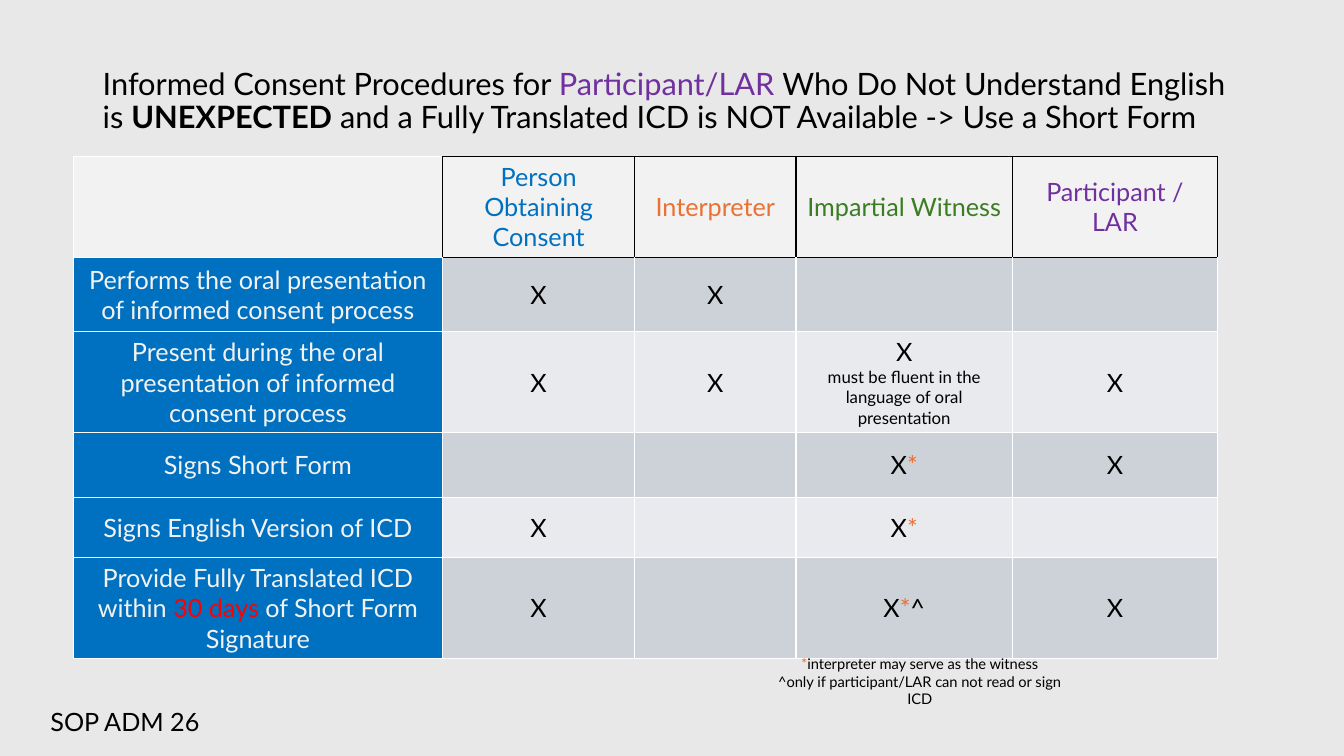
from dataclasses import dataclass

from lxml.etree import SubElement
from pptx import Presentation
from pptx.dml.color import RGBColor
from pptx.enum.text import MSO_ANCHOR as Anchor, PP_ALIGN as Align
from pptx.oxml.ns import qn
from pptx.slide import Slide
from pptx.table import _Cell as Cell
from pptx.text.text import TextFrame
from pptx.util import Cm, Pt

BLACK = RGBColor(0x00, 0x00, 0x00)
WHITE = RGBColor(0xFF, 0xFF, 0xFF)
BACKGROUND = RGBColor(0xE8, 0xE8, 0xE8)
PALE = RGBColor(0xF2, 0xF2, 0xF2)
BLUE = RGBColor(0x00, 0x70, 0xC0)
ORANGE = RGBColor(0xE9, 0x71, 0x32)
GREEN = RGBColor(0x3B, 0x7D, 0x23)
PURPLE = RGBColor(0x70, 0x30, 0xA0)
RED = RGBColor(0xFF, 0x00, 0x00)
BANDS = (RGBColor(0xCC, 0xD2, 0xD8), RGBColor(0xE8, 0xEA, 0xED))
FONT = "Lato"


@dataclass(frozen=True)
class Run:
    text: str
    color: RGBColor = BLACK
    bold: bool = False


@dataclass(frozen=True)
class Para:
    runs: tuple[Run, ...]
    size: float = 18
    align: Align = Align.CENTER
    spacing: float = 1.0


@dataclass(frozen=True)
class TextBox:
    left: float
    top: float
    width: float
    height: float
    paras: tuple[Para, ...]
    anchor: Anchor = Anchor.TOP


def line(text: str, color: RGBColor = BLACK) -> tuple[Para, ...]:
    return (Para((Run(text, color),)),)


EMPTY = ()
X = line("X")
X_STAR = (Para((Run("X"), Run("*", ORANGE))),)
X_STAR_CARET = (Para((Run("X"), Run("*", ORANGE), Run("^"))),)
X_FLUENT = X + (Para((Run("must be fluent in the language of oral presentation"),), 12),)
TRANSLATED = (Para((
    Run("Provide Fully Translated ICD within ", PALE),
    Run("30 days ", RED),
    Run("of Short Form Signature", PALE),
)),)

COL_WIDTHS = (9.3, 4.85, 4.06, 5.46, 5.16)
ROW_HEIGHTS = (2.54, 1.88, 2.54, 1.63, 1.52, 2.54)
ROWS = (
    (EMPTY, line("Person Obtaining Consent", BLUE), line("Interpreter", ORANGE),
     line("Impartial Witness", GREEN), line("Participant / LAR", PURPLE)),
    (line("Performs the oral presentation of informed consent process", PALE),
     X, X, EMPTY, EMPTY),
    (line("Present during the oral presentation of informed consent process", PALE),
     X, X, X_FLUENT, X),
    (line("Signs Short Form", PALE), EMPTY, EMPTY, X_STAR, X),
    (line("Signs English Version of ICD", PALE), X, EMPTY, X_STAR, EMPTY),
    (TRANSLATED, X, EMPTY, X_STAR_CARET, X),
)

TITLE = TextBox(2.34, 1.02, 29.21, 3.1, (Para((
    Run("Informed Consent Procedures for "),
    Run("Participant/LAR ", PURPLE),
    Run("Who Do Not Understand English is "),
    Run("UNEXPECTED", bold=True),
    Run(" and a Fully Translated ICD is NOT Available -> Use a Short Form"),
), 22, Align.LEFT, 0.9),), Anchor.MIDDLE)
SOP_LABEL = TextBox(1.02, 17.68, 7.26, 1.04,
                    (Para((Run("SOP ADM 26"),), align=Align.LEFT),))
FOOTNOTE = TextBox(19.28, 16.38, 7.8, 1.14, (
    Para((Run("*", ORANGE), Run("interpreter may serve as the witness")), 10.5),
    Para((Run("^only if participant/LAR can not read or sign ICD"),), 10.5),
))


def write_paras(tf: TextFrame, paras: tuple[Para, ...]) -> None:
    for i, para in enumerate(paras):
        p = tf.add_paragraph() if i else tf.paragraphs[0]
        p.alignment = para.align
        p.line_spacing = para.spacing
        p.font.name = FONT
        p.font.size = Pt(para.size)
        for run in para.runs:
            r = p.add_run()
            r.text = run.text
            r.font.color.rgb = run.color
            r.font.bold = run.bold


def add_text_box(s: Slide, box: TextBox) -> None:
    sp = s.shapes.add_textbox(Cm(box.left), Cm(box.top), Cm(box.width), Cm(box.height))
    tf = sp.text_frame
    tf.word_wrap = True
    tf.vertical_anchor = box.anchor
    write_paras(tf, box.paras)


def set_border(cell: Cell, side: str, color: RGBColor) -> None:
    tc_pr = cell._tc.get_or_add_tcPr()
    ln = SubElement(tc_pr, qn(f"a:ln{side}"), w=str(Pt(1)))
    fill = SubElement(ln, qn("a:solidFill"))
    SubElement(fill, qn("a:srgbClr"), val=str(color))


def border_colors(row: int, col: int) -> dict[str, RGBColor]:
    if row == 0 and col == 0:
        return {"R": BLACK, "B": WHITE}
    if row == 0:
        return dict.fromkeys("LRTB", BLACK)
    colors = dict.fromkeys("LRTB", WHITE)
    if row == 1 and col > 0:
        colors["T"] = BLACK
    return colors


def cell_fill(row: int, col: int) -> RGBColor:
    if row == 0:
        return PALE
    return BLUE if col == 0 else BANDS[(row - 1) % 2]


def add_consent_table(s: Slide) -> None:
    frame = s.shapes.add_table(len(ROWS), len(COL_WIDTHS), Cm(1.85), Cm(3.94),
                               Cm(sum(COL_WIDTHS)), Cm(sum(ROW_HEIGHTS)))
    table = frame.table
    table.first_row = False
    table.horz_banding = False
    for column, width in zip(table.columns, COL_WIDTHS):
        column.width = Cm(width)
    for row, height in zip(table.rows, ROW_HEIGHTS):
        row.height = Cm(height)
    for i, row_paras in enumerate(ROWS):
        for j, paras in enumerate(row_paras):
            cell = table.cell(i, j)
            cell.vertical_anchor = Anchor.MIDDLE
            for side, color in border_colors(i, j).items():
                set_border(cell, side, color)
            cell.fill.solid()
            cell.fill.fore_color.rgb = cell_fill(i, j)
            write_paras(cell.text_frame, paras)


def main() -> None:
    prs = Presentation()
    prs.slide_width = Cm(33.87)
    prs.slide_height = Cm(19.05)
    s = prs.slides.add_slide(prs.slide_layouts[6])
    s.background.fill.solid()
    s.background.fill.fore_color.rgb = BACKGROUND
    add_text_box(s, TITLE)
    add_consent_table(s)
    for box in (SOP_LABEL, FOOTNOTE):
        add_text_box(s, box)
    prs.save("out.pptx")


if __name__ == "__main__":
    main()
